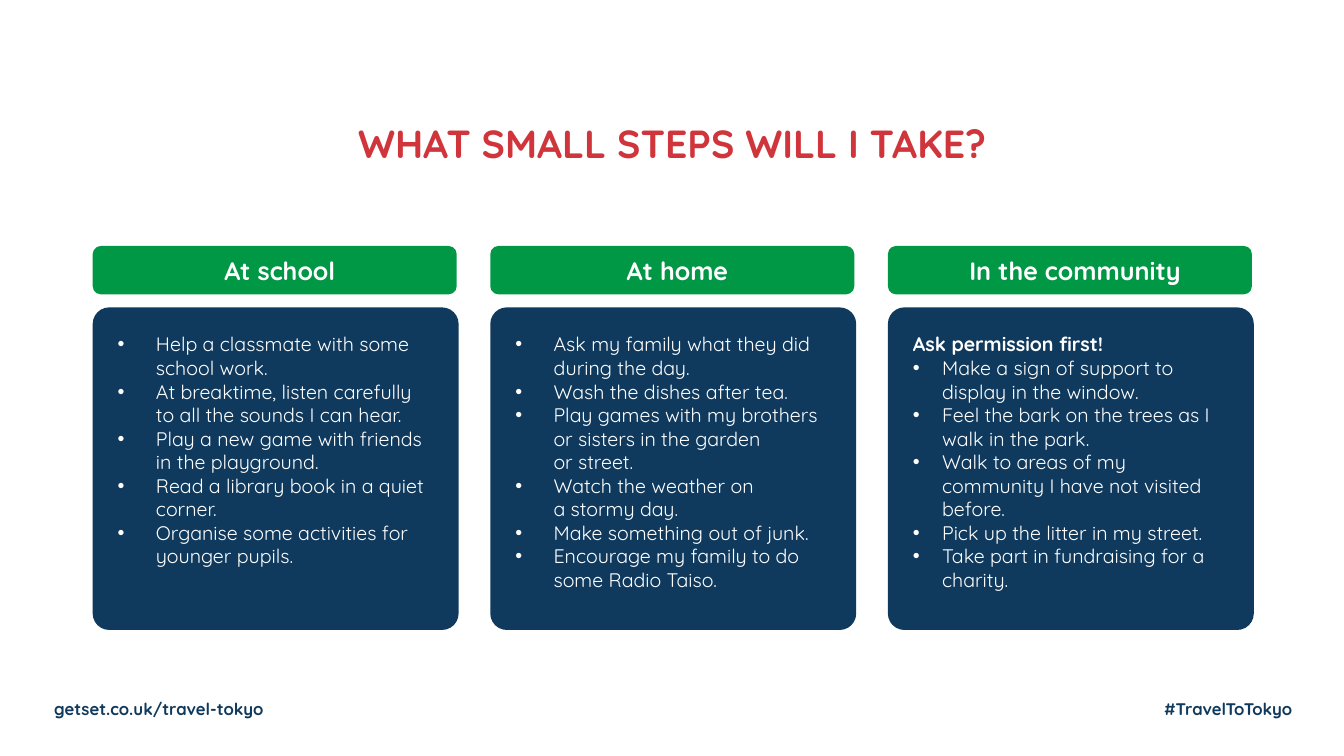
from pptx import Presentation
from pptx.dml.color import RGBColor
from pptx.enum.shapes import MSO_SHAPE as Shape
from pptx.enum.text import MSO_ANCHOR as Anchor, PP_ALIGN as Align
from pptx.oxml.ns import qn
from pptx.util import Pt
from lxml.etree import SubElement

NAVY = RGBColor(0x10, 0x3A, 0x5D)
GREEN = RGBColor(0x00, 0x98, 0x45)
RED = RGBColor(0xD0, 0x35, 0x3B)
WHITE = RGBColor(0xFF, 0xFF, 0xFF)

LEFT, STEP = 66.24, 284
COLUMNS = [
    ("At school", None, 27.36, [
        "Help a classmate with some school work.",
        "At breaktime, listen carefully to all the sounds I can hear.",
        "Play a new game with friends in the playground.",
        "Read a library book in a quiet corner.",
        "Organise some activities for younger pupils.",
    ]),
    ("At home", None, 27.36, [
        "Ask my family what they did during the day.",
        "Wash the dishes after tea.",
        "Play games with my brothers or sisters in the garden \nor street.",
        "Watch the weather on \na stormy day.",
        "Make something out of junk.",
        "Encourage my family to do some Radio Taiso.",
    ]),
    ("In the community", "Ask permission first!", 20.88, [
        "Make a sign of support to display in the window.",
        "Feel the bark on the trees as I walk in the park.",
        "Walk to areas of my community I have not visited before.",
        "Pick up the litter in my street.",
        "Take part in fundraising for a charity.",
    ]),
]


class SlideBuilder:
    """Holds the current slide and its text style, and adds each kind of element."""

    font = "Quicksand"

    def __init__(self, prs):
        self.s = prs.slides.add_slide(prs.slide_layouts[6])

    def add_text(self, p, text, size, color, bold=False):
        for i, line in enumerate(text.split("\n")):
            if i:
                p.add_line_break()
            r = p.add_run()
            r.text = line
            r.font.name, r.font.size, r.font.bold = self.font, Pt(size), bold
            r.font.color.rgb = color

    def label(self, x, y, w, h, text, size, color, align=Align.LEFT):
        tf = self.s.shapes.add_textbox(Pt(x), Pt(y), Pt(w), Pt(h)).text_frame
        tf.word_wrap = True
        p = tf.paragraphs[0]
        p.alignment = align
        self.add_text(p, text, size, color, bold=True)

    def panel(self, x, y, w, h, radius, fill, anchor, right_inset):
        sp = self.s.shapes.add_shape(Shape.ROUNDED_RECTANGLE, Pt(x), Pt(y), Pt(w), Pt(h))
        sp.adjustments[0] = radius
        sp.shadow.inherit = False
        sp.fill.solid()
        sp.fill.fore_color.rgb = fill
        sp.line.fill.background()
        tf = sp.text_frame
        tf.word_wrap = True
        tf.vertical_anchor = anchor
        tf.margin_left = tf.margin_top = tf.margin_bottom = Pt(14.4)
        tf.margin_right = Pt(right_inset)
        return tf

    def header(self, x, text):
        tf = self.panel(x, 175.68, 260, 34.56, 0.167, GREEN, Anchor.MIDDLE, 7.2)
        p = tf.paragraphs[0]
        p.alignment = Align.CENTER
        self.add_text(p, text, 18, WHITE, bold=True)

    def card(self, x, lead, indent, items):
        tf = self.panel(x, 219.6, 261.36, 230.4, 0.051, NAVY, Anchor.TOP, 14.4)
        lines = ([(lead, True)] if lead else []) + [(item, False) for item in items]
        for i, (text, is_lead) in enumerate(lines):
            p = tf.add_paragraph() if i else tf.paragraphs[0]
            p.alignment = Align.LEFT
            if not is_lead:
                self.bullet(p, indent)
            self.add_text(p, text, 14, WHITE, bold=is_lead)

    def bullet(self, p, indent):
        pPr = p._p.get_or_add_pPr()
        pPr.set("marL", str(Pt(indent)))
        pPr.set("indent", str(-Pt(indent)))
        color = SubElement(pPr, qn("a:buClr"))
        SubElement(color, qn("a:srgbClr")).set("val", str(WHITE))
        SubElement(pPr, qn("a:buFont")).set("typeface", "Arial")
        SubElement(pPr, qn("a:buChar")).set("char", "•")


def main():
    prs = Presentation()
    prs.slide_width, prs.slide_height = Pt(960), Pt(540)
    b = SlideBuilder(prs)
    b.label(31.68, 495.36, 256.32, 21.6, "getset.co.uk/travel-tokyo", 12, NAVY)
    b.label(824.4, 495.36, 145.44, 21.6, "#TravelToTokyo", 12, NAVY)
    b.label(36, 81.36, 888, 41.04, "WHAT SMALL STEPS WILL I TAKE?", 28, RED, Align.CENTER)
    for i, (title, lead, indent, items) in enumerate(COLUMNS):
        x = LEFT + i * STEP
        b.card(x, lead, indent, items)
        b.header(x, title)
    prs.save("out.pptx")


if __name__ == "__main__":
    main()
